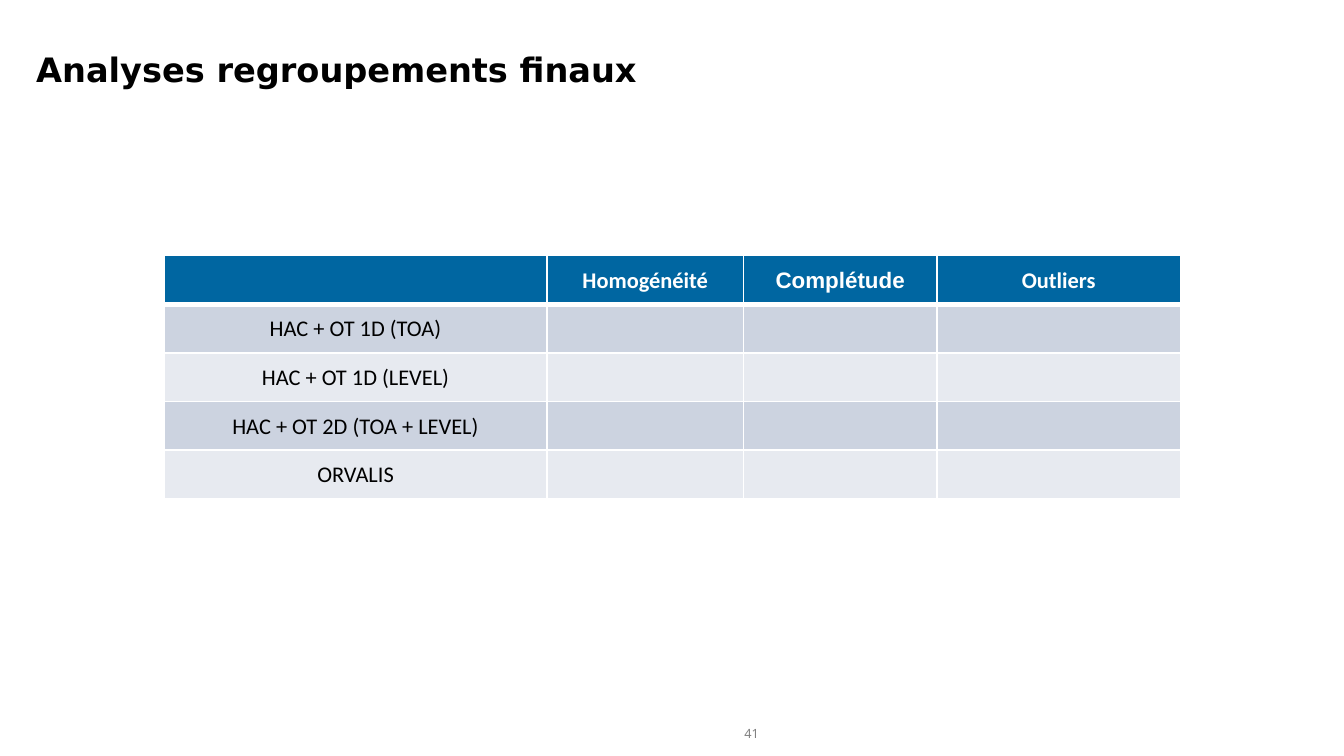
from typing import NamedTuple

from lxml.etree import SubElement as Sub
from pptx import Presentation
from pptx.dml.color import RGBColor as Rgb
from pptx.enum.text import MSO_ANCHOR as Anchor, PP_ALIGN as Align
from pptx.oxml.ns import qn
from pptx.util import Cm, Pt

HUES = {
    "head": "0066A1",
    "odd": "CCD3E0",
    "even": "E7EAF0",
    "white": "FFFFFF",
    "black": "000000",
    "grey": "818181",
}


class Style(NamedTuple):
    font: str
    size: float
    hue: str
    bold: bool = False


class Entry(NamedTuple):
    text: str
    style: Style


TITLE = Style("DejaVu Sans", 18, "black", True)
PAGE = Style("Noto Sans", 6.8, "grey")
HEAD = Style("Calibri", 12, "white", True)
BODY = Style("Calibri", 12, "black")

HEADS = [
    Entry("", HEAD),
    Entry("Homogénéité", HEAD),
    Entry("Complétude", HEAD._replace(font="Arial")),
    Entry("Outliers", HEAD),
]
LABELS = [
    "HAC + OT 1D (TOA)",
    "HAC + OT 1D (LEVEL)",
    "HAC + OT 2D (TOA + LEVEL)",
    "ORVALIS",
]
WIDTHS = [7.24, 3.71, 3.66, 4.6]
ROW = 0.92


def write(frame, entry: Entry, align: Align) -> None:
    para = frame.paragraphs[0]
    para.alignment = align
    if not entry.text:
        return
    run = para.add_run()
    run.text = entry.text
    font, style = run.font, entry.style
    font.name, font.size, font.bold = style.font, Pt(style.size), style.bold
    font.color.rgb = Rgb.from_string(HUES[style.hue])


def edge(cell, side: str, width: float) -> None:
    line = Sub(cell._tc.get_or_add_tcPr(), qn(f"a:ln{side}"), w=str(Pt(width)))
    fill = Sub(line, qn("a:solidFill"))
    Sub(fill, qn("a:srgbClr"), val=HUES["white"])


def draw_cell(cell, entry: Entry, hue: str, top: float, base: float) -> None:
    cell.margin_left = cell.margin_right = cell.margin_top = Cm(0.03)
    cell.margin_bottom = 0
    cell.vertical_anchor = Anchor.MIDDLE
    write(cell.text_frame, entry, Align.CENTER)
    for side, width in zip("LRTB", (1, 1, top, base)):
        edge(cell, side, width)
    cell.fill.solid()
    cell.fill.fore_color.rgb = Rgb.from_string(HUES[hue])


def draw_table(slide) -> None:
    rows = [HEADS]
    for label in LABELS:
        rows.append([Entry(label, BODY)] + [Entry("", BODY)] * (len(HEADS) - 1))
    table = slide.shapes.add_table(
        len(rows), len(WIDTHS), Cm(3.1), Cm(4.83),
        Cm(sum(WIDTHS)), Cm(ROW * len(rows)),
    ).table
    for col, width in zip(table.columns, WIDTHS):
        col.width = Cm(width)
    for i, row in enumerate(rows):
        hue = "head" if i == 0 else "odd" if i % 2 else "even"
        top, base = 3 if i == 1 else 1, 3 if i == 0 else 1
        for j, entry in enumerate(row):
            draw_cell(table.cell(i, j), entry, hue, top, base)


def draw_title(slide) -> None:
    title = slide.shapes.title
    title.left, title.top = Cm(0.43), Cm(0.79)
    title.width, title.height = Cm(16.08), Cm(1.57)
    title.text_frame.vertical_anchor = Anchor.TOP
    write(title.text_frame, Entry("Analyses regroupements finaux", TITLE), Align.LEFT)


def draw_page(slide) -> None:
    frame = slide.shapes.add_textbox(Cm(13.34), Cm(13.61), Cm(1.73), Cm(0.51)).text_frame
    frame.word_wrap = True
    frame.vertical_anchor = Anchor.MIDDLE
    frame.margin_left = frame.margin_right = Cm(0.2)
    frame.margin_top = frame.margin_bottom = Cm(0.1)
    write(frame, Entry("41", PAGE), Align.CENTER)


def main() -> None:
    deck = Presentation()
    deck.slide_width, deck.slide_height = Cm(25.4), Cm(14.29)
    slide = deck.slides.add_slide(deck.slide_layouts[5])
    draw_page(slide)
    draw_title(slide)
    draw_table(slide)
    deck.save("out.pptx")


if __name__ == "__main__":
    main()
